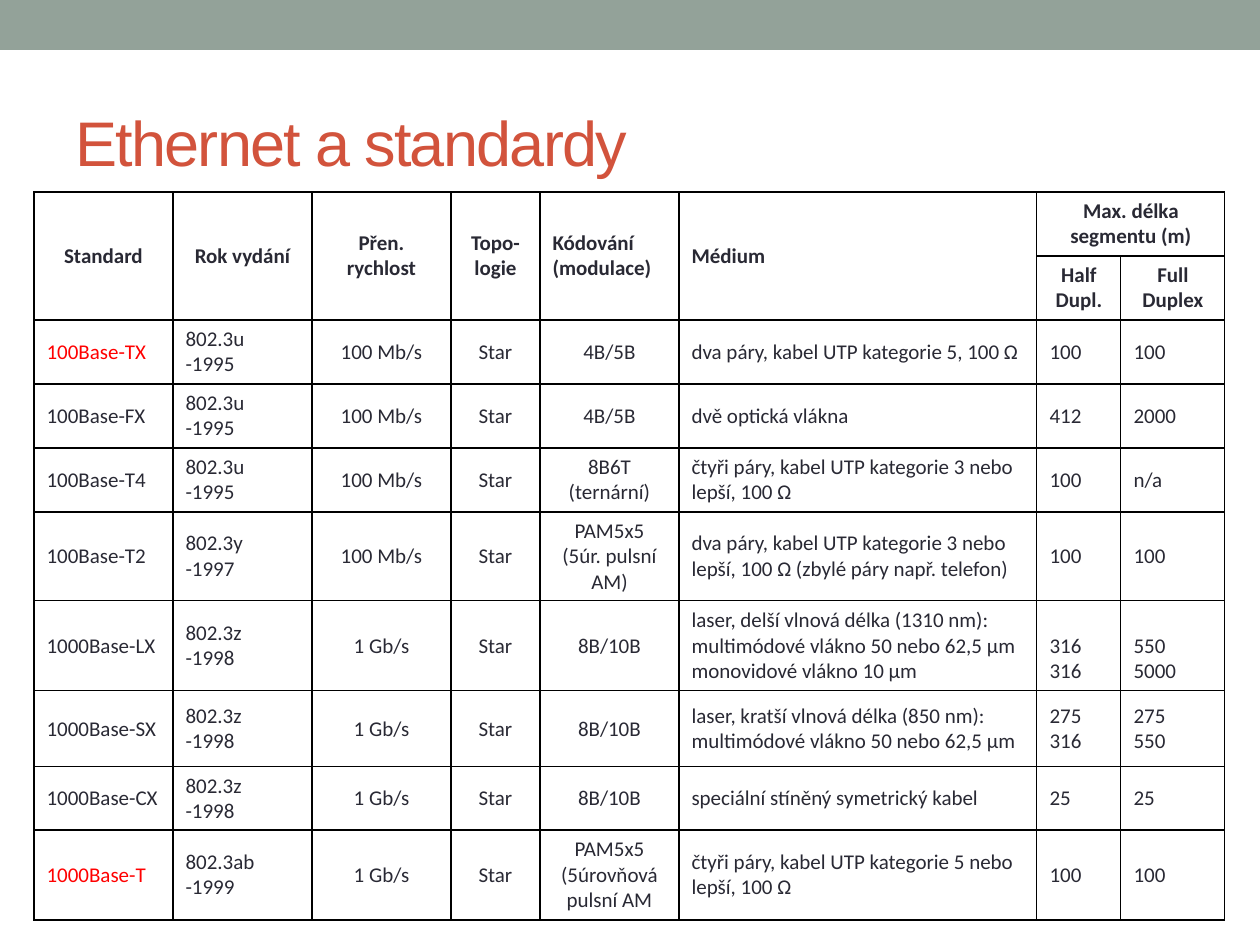
from lxml.etree import SubElement
from pptx import Presentation
from pptx.dml.color import RGBColor
from pptx.enum.shapes import MSO_SHAPE as Shape
from pptx.enum.text import MSO_ANCHOR as Anchor, PP_ALIGN as Align
from pptx.oxml.ns import qn
from pptx.util import Pt

PX = 914400 // 126
COLORS = {"band": "93A299", "title": "D2533C", "text": "292934",
          "highlight": "FF0000", "border": "000000"}

COLUMN_WIDTHS = [139, 139, 139, 89, 139, 358, 84, 104]
ROW_HEIGHTS = [64, 64, 64, 64, 64, 89, 90, 76, 63, 90]
HEADER = ["Standard", "Rok vydání", "Přen. rychlost", "Topo-logie",
          "Kódování (modulace)", "Médium", "Max. délka segmentu (m)"]
DUPLEX_HEADER = ["Half Dupl.", "Full Duplex"]
HALF_COLUMN, FULL_COLUMN = 6, 7
LEFT_HEADERS = {"Kódování (modulace)", "Médium"}
CENTERED_COLUMNS = {2, 3, 4}
HIGHLIGHTED = {"100Base-TX", "1000Base-T"}

# "|" starts a new paragraph, a newline is a line break
STANDARDS = [
    ["100Base-TX", "802.3u\n-1995", "100 Mb/s", "Star", "4B/5B",
     "dva páry, kabel UTP kategorie 5, 100 Ω", "100", "100"],
    ["100Base-FX", "802.3u\n-1995", "100 Mb/s", "Star", "4B/5B",
     "dvě optická vlákna", "412", "2000"],
    ["100Base-T4", "802.3u\n-1995", "100 Mb/s", "Star", "8B6T (ternární)",
     "čtyři páry, kabel UTP kategorie 3 nebo lepší, 100 Ω", "100", "n/a"],
    ["100Base-T2", "802.3y\n-1997", "100 Mb/s", "Star", "PAM5x5|(5úr. pulsní AM)",
     "dva páry, kabel UTP kategorie 3 nebo lepší, 100 Ω (zbylé páry např. telefon)",
     "100", "100"],
    ["1000Base-LX", "802.3z\n-1998", "1 Gb/s", "Star", "8B/10B",
     "laser, delší vlnová délka (1310 nm):\nmultimódové vlákno 50 nebo 62,5 μm"
     "\nmonovidové vlákno 10 μm", "316\n316", "550\n5000"],
    ["1000Base-SX", "802.3z\n-1998", "1 Gb/s", "Star", "8B/10B",
     "laser, kratší vlnová délka (850 nm):\nmultimódové vlákno 50 nebo 62,5 μm",
     "275\n316", "275\n550"],
    ["1000Base-CX", "802.3z\n-1998", "1 Gb/s", "Star", "8B/10B",
     "speciální stíněný symetrický kabel", "25", "25"],
    ["1000Base-T", "802.3ab\n-1999", "1 Gb/s", "Star", "PAM5x5|(5úrovňová pulsní AM",
     "čtyři páry, kabel UTP kategorie 5 nebo lepší, 100 Ω", "100", "100"],
]


def px(*lengths):
    return [length * PX for length in lengths]


def color(name):
    return RGBColor.from_string(COLORS[name])


def add_band(slide):
    band = slide.shapes.add_shape(Shape.RECTANGLE, *px(0, 0, 1260, 50))
    band.shadow.inherit = False
    band.fill.solid()
    band.fill.fore_color.rgb = color("band")
    band.line.fill.background()


def add_title(slide, text):
    frame = slide.shapes.add_textbox(*px(63, 73, 1134, 136)).text_frame
    frame.word_wrap = True
    frame.vertical_anchor = Anchor.MIDDLE
    title = frame.paragraphs[0]
    run = title.add_run()
    run.text = text
    run.font.name, run.font.size = "Arial", Pt(36)
    run.font.color.rgb = color("title")
    run.font._element.set("spc", "-100")


def style_cell(cell):
    properties = cell._tc.get_or_add_tcPr()
    for side in ("lnL", "lnR", "lnT", "lnB"):
        border = SubElement(properties, qn(f"a:{side}"), w=str(Pt(0.75)))
        fill = SubElement(border, qn("a:solidFill"))
        SubElement(fill, qn("a:srgbClr"), val=COLORS["border"])
    cell.fill.background()
    cell.vertical_anchor = Anchor.MIDDLE


def write_cell(cell, text, centered, bold=False):
    frame = cell.text_frame
    for index, line in enumerate(text.split("|")):
        paragraph = frame.add_paragraph() if index else frame.paragraphs[0]
        paragraph.text = line
        paragraph.alignment = Align.CENTER if centered else Align.LEFT
        font = paragraph.font
        font.name, font.size, font.bold = "Calibri", Pt(12), bold
        font.color.rgb = color("highlight" if text in HIGHLIGHTED else "text")


def add_standards_table(slide):
    table = slide.shapes.add_table(
        len(ROW_HEIGHTS), len(COLUMN_WIDTHS),
        *px(34, 192, sum(COLUMN_WIDTHS), sum(ROW_HEIGHTS))).table
    table.first_row = table.horz_banding = False
    for column, width in zip(table.columns, px(*COLUMN_WIDTHS)):
        column.width = width
    for row, height in zip(table.rows, px(*ROW_HEIGHTS)):
        row.height = height
    for cell in table.iter_cells():
        style_cell(cell)

    # Two-level header
    for column in range(HALF_COLUMN):
        table.cell(0, column).merge(table.cell(1, column))
    table.cell(0, HALF_COLUMN).merge(table.cell(0, FULL_COLUMN))
    for column, text in enumerate(HEADER):
        write_cell(table.cell(0, column), text, text not in LEFT_HEADERS, bold=True)
    for column, text in enumerate(DUPLEX_HEADER, HALF_COLUMN):
        write_cell(table.cell(1, column), text, True, bold=True)

    # One row per standard
    for row, standard in enumerate(STANDARDS, 2):
        for column, text in enumerate(standard):
            write_cell(table.cell(row, column), text, column in CENTERED_COLUMNS)
        # Lengths line up with the two fibre types below the laser line
        if standard[0] == "1000Base-LX":
            for column in (HALF_COLUMN, FULL_COLUMN):
                table.cell(row, column).vertical_anchor = Anchor.BOTTOM


def main():
    presentation = Presentation()
    presentation.slide_width, presentation.slide_height = px(1260, 945)
    slide = presentation.slides.add_slide(presentation.slide_layouts[6])
    add_band(slide)
    add_title(slide, "Ethernet a standardy")
    add_standards_table(slide)
    presentation.save("out.pptx")


if __name__ == "__main__":
    main()
